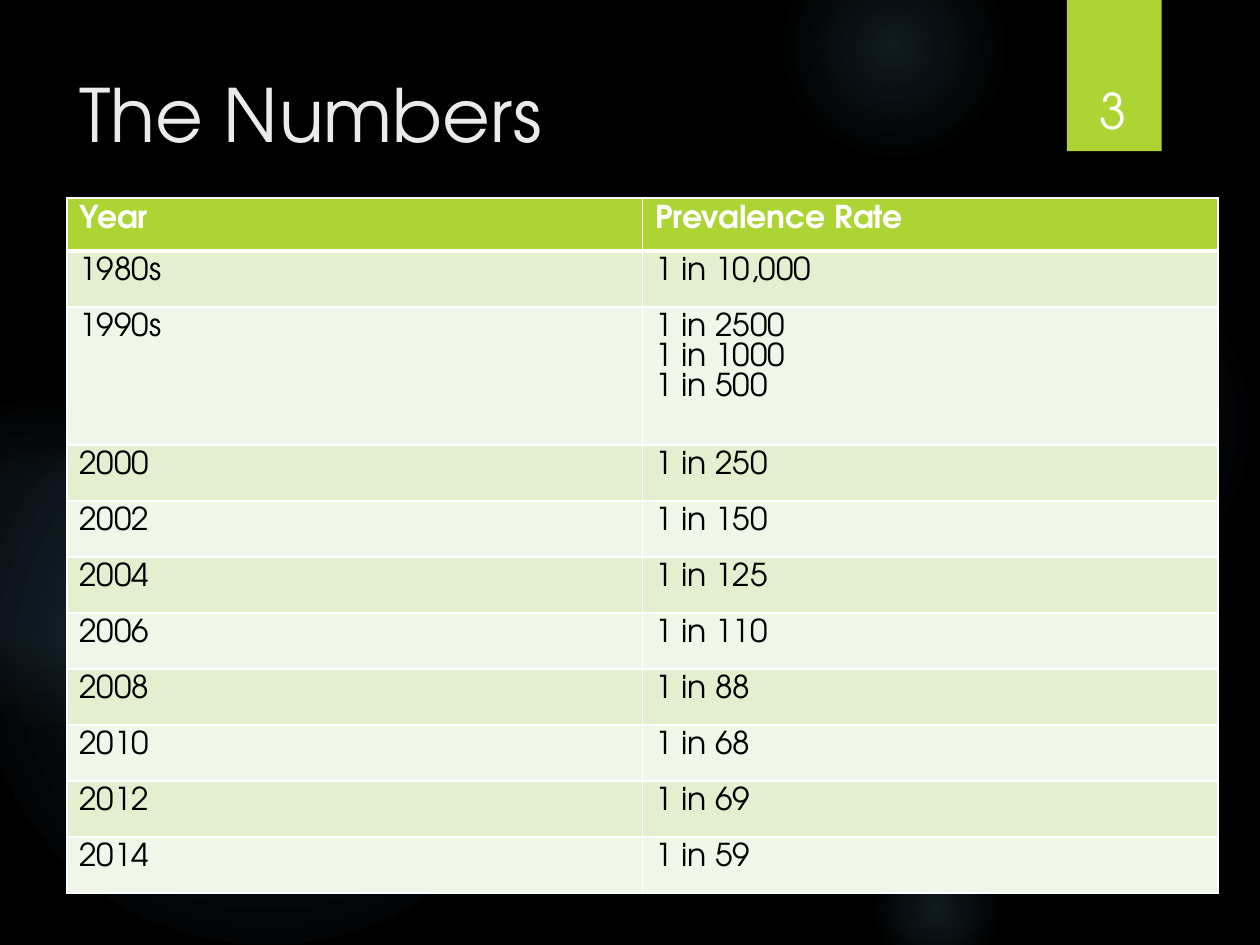
from lxml import etree
from pptx import Presentation
from pptx.dml.color import RGBColor
from pptx.enum.shapes import MSO_SHAPE
from pptx.enum.text import MSO_ANCHOR, PP_ALIGN
from pptx.oxml import parse_xml
from pptx.oxml.ns import nsdecls, qn
from pptx.util import Cm, Pt

OVAL, RECTANGLE = MSO_SHAPE.OVAL, MSO_SHAPE.RECTANGLE
TOP, BOTTOM = MSO_ANCHOR.TOP, MSO_ANCHOR.BOTTOM
LEFT, CENTER = PP_ALIGN.LEFT, PP_ALIGN.CENTER

FONT = "TeX Gyre Adventor"
BLACK = RGBColor(0x00, 0x00, 0x00)
WHITE = RGBColor(0xFF, 0xFF, 0xFF)
OFF_WHITE = RGBColor(0xEB, 0xEB, 0xEB)
GREEN = RGBColor(0xAC, 0xD4, 0x33)
BANDS = (RGBColor(0xE3, 0xEF, 0xCE), RGBColor(0xF1, 0xF7, 0xE8))
GLOW = RGBColor(0x7A, 0xC4, 0xF0)

# left, top, diameter in cm; (position %, opacity %) from the centre outwards
GLOWS = [
    (17.5, 4.65, 7.82, [(0, 7), (36, 6), (69, 0)]),
    (15.8, -1.27, 4.45, [(0, 14), (36, 7), (73, 0)]),
    (17.5, 16.94, 2.74, [(0, 14), (36, 7), (66, 0)]),
    (-0.43, 7.42, 11.63, [(0, 11), (36, 10), (75, 0)]),
    (-2.34, 8.05, 6.55, [(0, 8), (36, 8), (72, 0)]),
]

HEADER = ("Year", ["Prevalence Rate"])
RATES = [
    ("1980s", ["1 in 10,000"]),
    ("1990s", ["1 in 2500", "1 in 1000", "1 in 500"]),
    ("2000", ["1 in 250"]),
    ("2002", ["1 in 150"]),
    ("2004", ["1 in 125"]),
    ("2006", ["1 in 110"]),
    ("2008", ["1 in 88"]),
    ("2010", ["1 in 68"]),
    ("2012", ["1 in 69"]),
    ("2014", ["1 in 59"]),
]
HEADER_HEIGHT, ROW_HEIGHT, TALL_HEIGHT = 1.07, 1.13, 2.78
COLUMN_WIDTH = 11.6


def add_plain_shape(page, kind, left, top, width, height):
    shape = page.shapes.add_shape(kind, Cm(left), Cm(top), Cm(width), Cm(height))
    shape.shadow.inherit = False
    shape.line.fill.background()
    return shape


def add_glow(page, left, top, size, stops):
    """Add a circle whose radial gradient fades to transparent."""
    oval = add_plain_shape(page, OVAL, left, top, size, size)
    stop_xml = "".join(
        f'<a:gs pos="{position * 1000}"><a:srgbClr val="{GLOW}">'
        f'<a:alpha val="{opacity * 1000}"/></a:srgbClr></a:gs>'
        for position, opacity in stops)
    gradient = parse_xml(
        f'<a:gradFill {nsdecls("a")} rotWithShape="1"><a:gsLst>{stop_xml}</a:gsLst>'
        '<a:path path="circle"><a:fillToRect l="50000" t="50000" r="50000" b="50000"/>'
        '</a:path></a:gradFill>')
    oval._element.spPr.find(qn("a:prstGeom")).addnext(gradient)


def write_lines(frame, lines, size, color, bold=False, align=LEFT, spacing=None):
    for index, line in enumerate(lines):
        para = frame.paragraphs[0] if index == 0 else frame.add_paragraph()
        para.alignment = align
        para.line_spacing = spacing
        span = para.add_run()
        span.text = line
        span.font.name = FONT
        span.font.size = Pt(size)
        span.font.bold = bold
        span.font.color.rgb = color


def add_text(page, left, top, width, height, text, size, color, anchor=TOP, align=LEFT):
    box = page.shapes.add_textbox(Cm(left), Cm(top), Cm(width), Cm(height))
    box.text_frame.word_wrap = True
    box.text_frame.vertical_anchor = anchor
    write_lines(box.text_frame, [text], size, color, align=align)


def set_borders(cell, widths):
    """Draw white borders; widths maps lnL, lnR, lnT and lnB to points."""
    properties = cell._tc.get_or_add_tcPr()
    for index, (side, width) in enumerate(widths.items()):
        line = etree.Element(qn(f"a:{side}"), w=str(Pt(width)))
        fill = etree.SubElement(line, qn("a:solidFill"))
        etree.SubElement(fill, qn("a:srgbClr"), val=str(WHITE))
        properties.insert(index, line)


def add_rate_table(page, left, top):
    rows = [HEADER] + RATES
    heights = [HEADER_HEIGHT] + [
        TALL_HEIGHT if len(rates) > 1 else ROW_HEIGHT for _, rates in RATES]
    table = page.shapes.add_table(
        len(rows), 2, Cm(left), Cm(top), Cm(2 * COLUMN_WIDTH), Cm(sum(heights))).table
    for column in table.columns:
        column.width = Cm(COLUMN_WIDTH)
    for index, (year, rates) in enumerate(rows):
        table.rows[index].height = Cm(heights[index])
        is_header = index == 0
        for cell, lines in zip(table.rows[index].cells, ([year], rates)):
            cell.fill.solid()
            cell.fill.fore_color.rgb = GREEN if is_header else BANDS[(index - 1) % 2]
            set_borders(cell, {"lnL": 1, "lnR": 1, "lnT": 3 if index == 1 else 1,
                               "lnB": 3 if is_header else 1})
            write_lines(cell.text_frame, lines, 18, WHITE if is_header else BLACK,
                        bold=is_header, spacing=Pt(17))


def main():
    deck = Presentation()
    deck.slide_width, deck.slide_height = Cm(25.4), Cm(19.05)
    page = deck.slides.add_slide(deck.slide_layouts[6])
    page.background.fill.solid()
    page.background.fill.fore_color.rgb = BLACK

    for glow in GLOWS:
        add_glow(page, *glow)
    tab = add_plain_shape(page, RECTANGLE, 21.51, 0, 1.91, 3.05)
    tab.fill.solid()
    tab.fill.fore_color.rgb = GREEN

    add_text(page, 1.35, 1.27, 19.6, 3.89, "The Numbers", 42, OFF_WHITE)
    add_rate_table(page, 1.35, 3.99)
    add_text(page, 21.56, 0.81, 1.75, 2.13, "3", 28, WHITE, BOTTOM, CENTER)
    deck.save("out.pptx")


if __name__ == "__main__":
    main()
